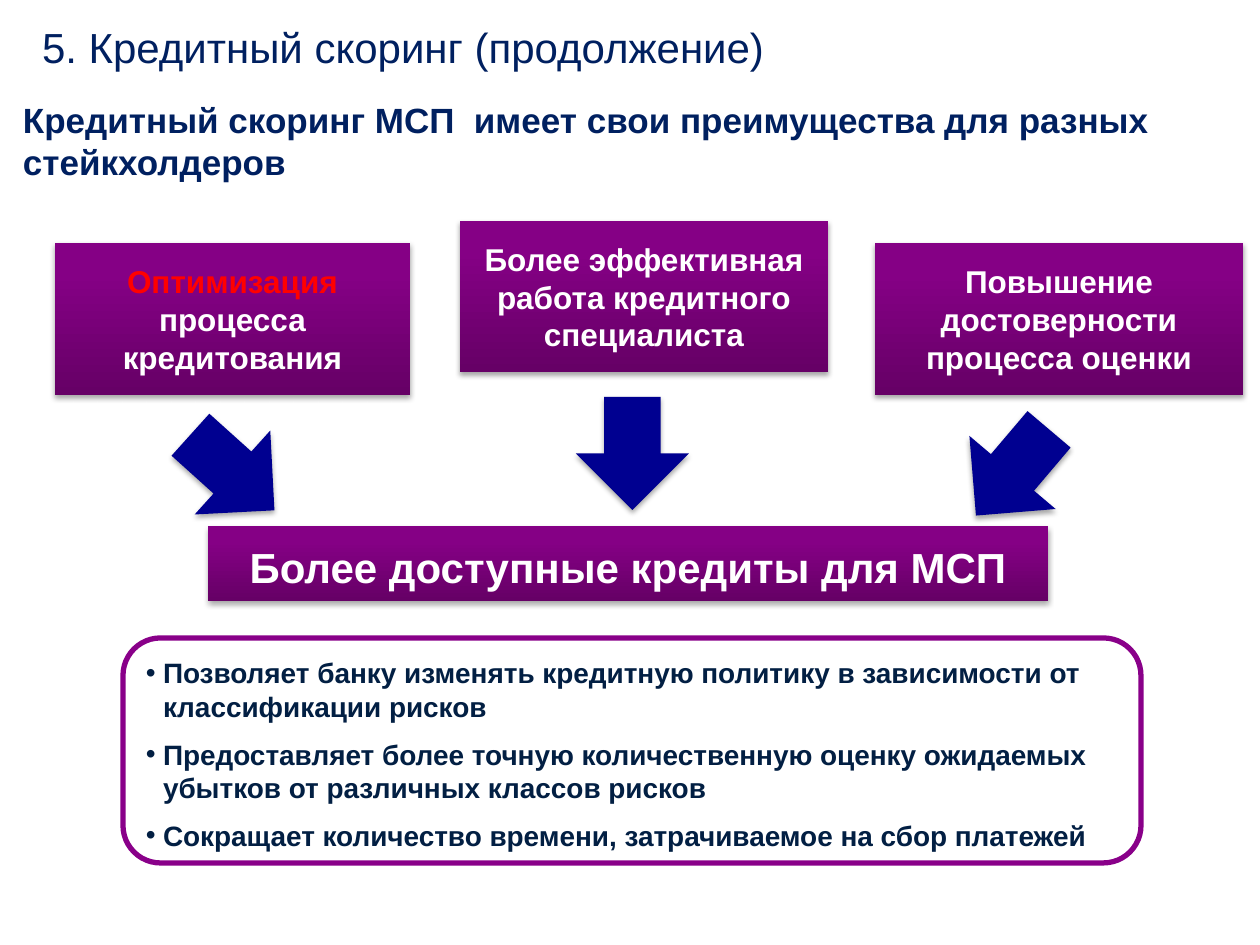
from dataclasses import dataclass

from lxml import etree
from pptx import Presentation
from pptx.dml.color import RGBColor
from pptx.enum.shapes import MSO_SHAPE
from pptx.enum.text import MSO_ANCHOR, MSO_AUTO_SIZE, PP_ALIGN
from pptx.oxml.ns import qn
from pptx.util import Emu, Pt

RECTANGLE = MSO_SHAPE.RECTANGLE
DOWN_ARROW = MSO_SHAPE.DOWN_ARROW
ROUNDED = MSO_SHAPE.ROUNDED_RECTANGLE
TOP, MIDDLE = MSO_ANCHOR.TOP, MSO_ANCHOR.MIDDLE
LEFT, CENTER = PP_ALIGN.LEFT, PP_ALIGN.CENTER
NO_AUTOFIT = MSO_AUTO_SIZE.NONE

PX = 914400 / 126  # EMU in one px
TITLE_AND_CONTENT = 1


@dataclass(frozen=True)
class Theme:
    font: str = "Arial"
    heading: str = "002060"
    body: str = "021F43"
    white: str = "FFFFFF"
    accent: str = "FF0000"
    box_dark: str = "660066"
    box_light: str = "850085"
    frame: str = "890089"
    arrow: str = "000090"
    shadow: str = "000000"
    title_size: int = 24
    banner_size: int = 24
    subtitle_size: int = 20
    card_size: int = 18
    list_size: int = 16


THEME = Theme()


@dataclass(frozen=True)
class Box:
    left: int
    top: int
    width: int
    height: int


@dataclass(frozen=True)
class Card:
    box: Box
    text: str
    accent: str = ""


@dataclass(frozen=True)
class Arrow:
    left: int
    top: int
    rotation: float


ARROW_SIZE = 113
TITLE = "5. Кредитный скоринг (продолжение)"
SUBTITLE = "Кредитный скоринг МСП  имеет свои преимущества для разных стейкхолдеров"
BANNER = "Более доступные кредиты для МСП"
CARDS = [
    Card(Box(55, 243, 355, 152), "процесса кредитования", "Оптимизация "),
    Card(Box(460, 221, 368, 151), "Более эффективная работа кредитного специалиста"),
    Card(Box(875, 243, 368, 152), "Повышение достоверности процесса оценки"),
]
ARROWS = [Arrow(176, 416, 312), Arrow(576, 397, 0), Arrow(956, 416, 40.3)]
BENEFITS = [
    "Позволяет банку изменять кредитную политику в зависимости от классификации рисков",
    "Предоставляет более точную количественную оценку ожидаемых убытков от различных классов рисков",
    "Сокращает количество времени, затрачиваемое на сбор платежей",
]


def px(value: float) -> Emu:
    return Emu(round(value * PX))


def place(shape, box: Box) -> None:
    shape.left, shape.top = px(box.left), px(box.top)
    shape.width, shape.height = px(box.width), px(box.height)


def add_shape(slide, kind, box: Box):
    shape = slide.shapes.add_shape(
        kind, px(box.left), px(box.top), px(box.width), px(box.height))
    shape.shadow.inherit = False
    return shape


def add_shadow(shape) -> None:
    effects = shape._element.spPr.find(qn("a:effectLst"))
    shadow = etree.SubElement(
        effects, qn("a:outerShdw"), blurRad=str(Pt(3.1)), dist=str(Pt(1.8)),
        dir="5400000", rotWithShape="0")
    color = etree.SubElement(shadow, qn("a:srgbClr"), val=THEME.shadow)
    etree.SubElement(color, qn("a:alpha"), val="35000")


def prepare_frame(shape, anchor):
    frame = shape.text_frame
    frame.word_wrap = True
    frame.auto_size = NO_AUTOFIT
    frame.vertical_anchor = anchor
    frame.margin_left = frame.margin_right = 0
    frame.margin_top = frame.margin_bottom = 0
    return frame


def format_font(font, size: int, color: str, bold: bool = True) -> None:
    font.name = THEME.font
    font.size = Pt(size)
    font.bold = bold
    font.color.rgb = RGBColor.from_string(color)


def write(shape, text: str, size: int, color: str, align, anchor=TOP, bold=True):
    frame = prepare_frame(shape, anchor)
    frame.text = text
    paragraph = frame.paragraphs[0]
    paragraph.alignment = align
    paragraph.space_before = Pt(0)
    format_font(paragraph.runs[0].font, size, color, bold)
    return paragraph


def add_gradient_box(slide, box: Box):
    shape = add_shape(slide, RECTANGLE, box)
    shape.fill.gradient()
    shape.fill.gradient_angle = 90
    stops = ((0, THEME.box_dark), (0.8, THEME.box_light))
    for stop, (position, color) in zip(shape.fill.gradient_stops, stops):
        stop.position = position
        stop.color.rgb = RGBColor.from_string(color)
    shape.line.fill.background()
    add_shadow(shape)
    return shape


def add_card(slide, card: Card) -> None:
    shape = add_gradient_box(slide, card.box)
    paragraph = write(shape, card.accent or card.text, THEME.card_size,
                      THEME.accent if card.accent else THEME.white, CENTER, MIDDLE)
    if card.accent:
        run = paragraph.add_run()
        run.text = card.text
        format_font(run.font, THEME.card_size, THEME.white)


def add_arrow(slide, arrow: Arrow) -> None:
    shape = add_shape(slide, DOWN_ARROW,
                      Box(arrow.left, arrow.top, ARROW_SIZE, ARROW_SIZE))
    shape.rotation = arrow.rotation
    shape.fill.solid()
    shape.fill.fore_color.rgb = RGBColor.from_string(THEME.arrow)
    shape.line.fill.background()
    add_shadow(shape)


def fill_list(shape, items: list[str]) -> None:
    frame = prepare_frame(shape, TOP)
    frame.text = "\n".join(items)
    for index, paragraph in enumerate(frame.paragraphs):
        paragraph.space_before = Pt(8 if index else 0)
        properties = paragraph._p.get_or_add_pPr()
        properties.set("marL", str(px(17)))
        properties.set("indent", str(-px(17)))
        etree.SubElement(properties, qn("a:buChar"), char="•")
        format_font(paragraph.runs[0].font, THEME.list_size, THEME.body)


def main() -> None:
    presentation = Presentation()
    presentation.slide_width, presentation.slide_height = px(1260), px(945)
    slide = presentation.slides.add_slide(
        presentation.slide_layouts[TITLE_AND_CONTENT])

    # Title and subtitle
    title, body = slide.shapes.title, slide.placeholders[1]
    place(title, Box(42, 22, 800, 50))
    write(title, TITLE, THEME.title_size, THEME.heading, LEFT, bold=False)
    subtitle = slide.shapes.add_textbox(px(23), px(98), px(1158), px(84))
    write(subtitle, SUBTITLE, THEME.subtitle_size, THEME.heading, LEFT)

    # Three advantages leading to one result
    for card in CARDS:
        add_card(slide, card)
    for arrow in ARROWS:
        add_arrow(slide, arrow)
    banner = add_gradient_box(slide, Box(208, 526, 840, 75))
    write(banner, BANNER, THEME.banner_size, THEME.white, CENTER).line_spacing = 1.3

    # Framed list of benefits
    frame = add_shape(slide, ROUNDED, Box(123, 638, 1018, 225))
    frame.fill.background()
    frame.line.color.rgb = RGBColor.from_string(THEME.frame)
    frame.line.width = Pt(3)
    place(body, Box(146, 656, 973, 200))
    fill_list(body, BENEFITS)

    presentation.save("out.pptx")


if __name__ == "__main__":
    main()
